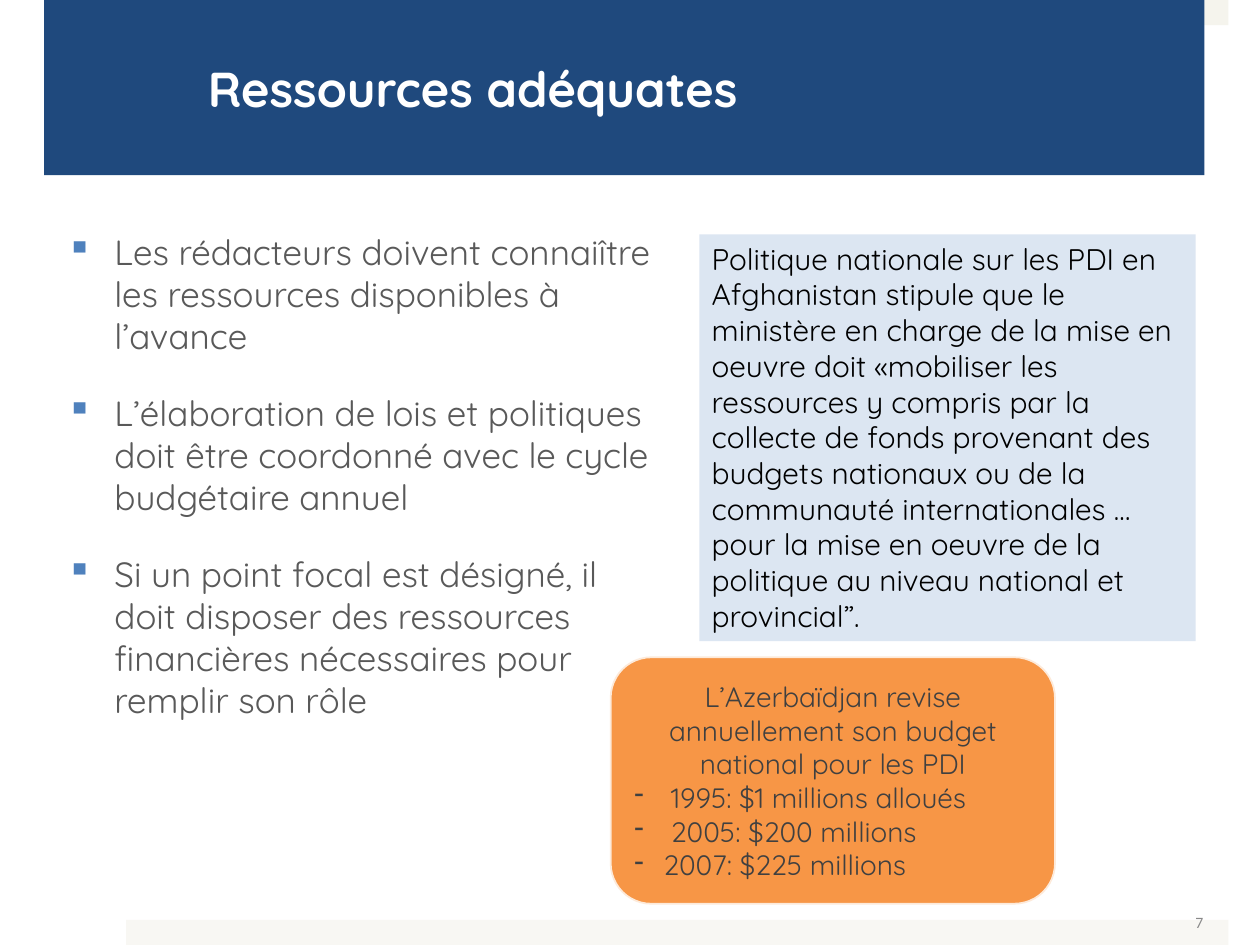
"""Build the slide on adequate resources for IDP policies."""
from lxml.etree import SubElement
from pptx import Presentation
from pptx.dml.color import RGBColor
from pptx.enum.shapes import MSO_SHAPE
from pptx.enum.text import MSO_ANCHOR, PP_ALIGN
from pptx.oxml.ns import qn
from pptx.util import Inches, Pt

COLORS = {
    "top_band": "F5F4ED", "bottom_band": "F8F7F3", "title": "1F497D",
    "quote": "DCE6F2", "budget": "F79646", "white": "FFFFFF", "black": "000000",
    "body": "595959", "bullet": "4F81BD", "budget_text": "404040", "number": "898989",
}

TITLE = ["Ressources adéquates"]
POINTS = [
    "Les rédacteurs doivent connaiître les ressources disponibles à l’avance",
    "L’élaboration de lois et politiques doit être coordonné avec le cycle budgétaire annuel",
    "Si un point focal est désigné, il doit disposer des ressources financières "
    "nécessaires pour remplir son rôle",
]
QUOTE = [
    "Politique nationale sur les PDI en Afghanistan stipule que le ministère en charge "
    "de la mise en oeuvre doit «mobiliser les ressources y compris par la collecte de fonds "
    "provenant des budgets nationaux ou de la communauté internationales …pour la mise en "
    "oeuvre de la politique au niveau national et provincial”.",
]
BUDGET_HEAD = ["L’Azerbaïdjan revise annuellement son budget national pour les PDI"]
BUDGETS = [" 1995: $1 millions alloués", " 2005: $200 millions", "2007: $225 millions"]

BANDS = [("top_band", (1, 0, 8.75, 0.2)), ("bottom_band", (1, 7.3, 8.75, 0.2))]
TITLE_BOX = (0.35, 0, 9.21, 1.39)
POINTS_BOX = (0.43, 1.78, 4.88, 3.78)
QUOTE_BOX = (5.55, 1.86, 3.94, 3.23)
BUDGET_BOX = (4.84, 5.21, 3.54, 1.97)
NUMBER_BOX = (7.29, 7.12, 2.33, 0.4)

TITLE_FONT = {"name": "Quicksand", "size": Pt(28), "bold": True}
POINTS_FONT = {"name": "Quicksand", "size": Pt(20)}
QUOTE_FONT = {"name": "Quicksand", "size": Pt(17)}
BUDGET_FONT = {"name": "Quicksand", "size": Pt(16)}
NUMBER_FONT = {"name": "Calibri", "size": Pt(9)}


def rgb(key):
    return RGBColor.from_string(COLORS[key])


def add_box(s, box, fill, kind=MSO_SHAPE.RECTANGLE):
    sp = s.shapes.add_shape(kind, *map(Inches, box))
    sp.shadow.inherit = False
    sp.fill.solid()
    sp.fill.fore_color.rgb = rgb(fill)
    sp.line.fill.background()
    return sp


def set_frame(sp, anchor=MSO_ANCHOR.TOP, insets=(0.1, 0.05, 0.1, 0.05)):
    tf = sp.text_frame
    tf.word_wrap = True
    tf.vertical_anchor = anchor
    tf.margin_left, tf.margin_top, tf.margin_right, tf.margin_bottom = map(Inches, insets)
    return tf


def add_bullet(p, char, indent, color):
    pPr = p._p.get_or_add_pPr()
    pPr.set("marL", str(Inches(indent)))
    pPr.set("indent", str(-Inches(indent)))
    buClr = SubElement(pPr, qn("a:buClr"))
    SubElement(buClr, qn("a:srgbClr"), val=COLORS[color])
    SubElement(pPr, qn("a:buChar"), char=char)


def write(tf, lines, font, color, align=PP_ALIGN.LEFT, gap=0, bullet=None):
    for line in lines:
        first = not tf.text
        p = tf.paragraphs[0] if first else tf.add_paragraph()
        p.alignment = align
        p.space_before = Pt(0 if first else gap)
        if bullet:
            add_bullet(p, *bullet)
        r = p.add_run()
        r.text = line
        for name, value in font.items():
            setattr(r.font, name, value)
        r.font.color.rgb = rgb(color)


def main():
    prs = Presentation()
    prs.slide_width, prs.slide_height = Inches(10), Inches(7.5)
    s = prs.slides.add_slide(prs.slide_layouts[6])

    for fill, box in BANDS:
        add_box(s, box, fill)

    number = s.shapes.add_textbox(*map(Inches, NUMBER_BOX))
    tf = set_frame(number, MSO_ANCHOR.MIDDLE, (0.07, 0.04, 0.07, 0.04))
    write(tf, ["7"], NUMBER_FONT, "number", PP_ALIGN.RIGHT)

    title = add_box(s, TITLE_BOX, "title")
    tf = set_frame(title, MSO_ANCHOR.MIDDLE, (1.3, 0.05, 0.3, 0.05))
    write(tf, TITLE, TITLE_FONT, "white")

    points = s.shapes.add_textbox(*map(Inches, POINTS_BOX))
    write(set_frame(points), POINTS, POINTS_FONT, "body", gap=20, bullet=("▪", 0.38, "bullet"))

    quote = add_box(s, QUOTE_BOX, "quote")
    write(set_frame(quote), QUOTE, QUOTE_FONT, "black")

    budget = add_box(s, BUDGET_BOX, "budget", MSO_SHAPE.ROUNDED_RECTANGLE)
    budget.line.color.rgb = rgb("white")
    budget.line.width = Pt(2)
    line_color = budget.line._ln.find(".//" + qn("a:srgbClr"))
    SubElement(line_color, qn("a:alpha"), val="80000")
    tf = set_frame(budget, MSO_ANCHOR.MIDDLE)
    write(tf, BUDGET_HEAD, BUDGET_FONT, "budget_text", PP_ALIGN.CENTER)
    write(tf, BUDGETS, BUDGET_FONT, "budget_text", bullet=("-", 0.23, "budget_text"))

    prs.save("out.pptx")


if __name__ == "__main__":
    main()
